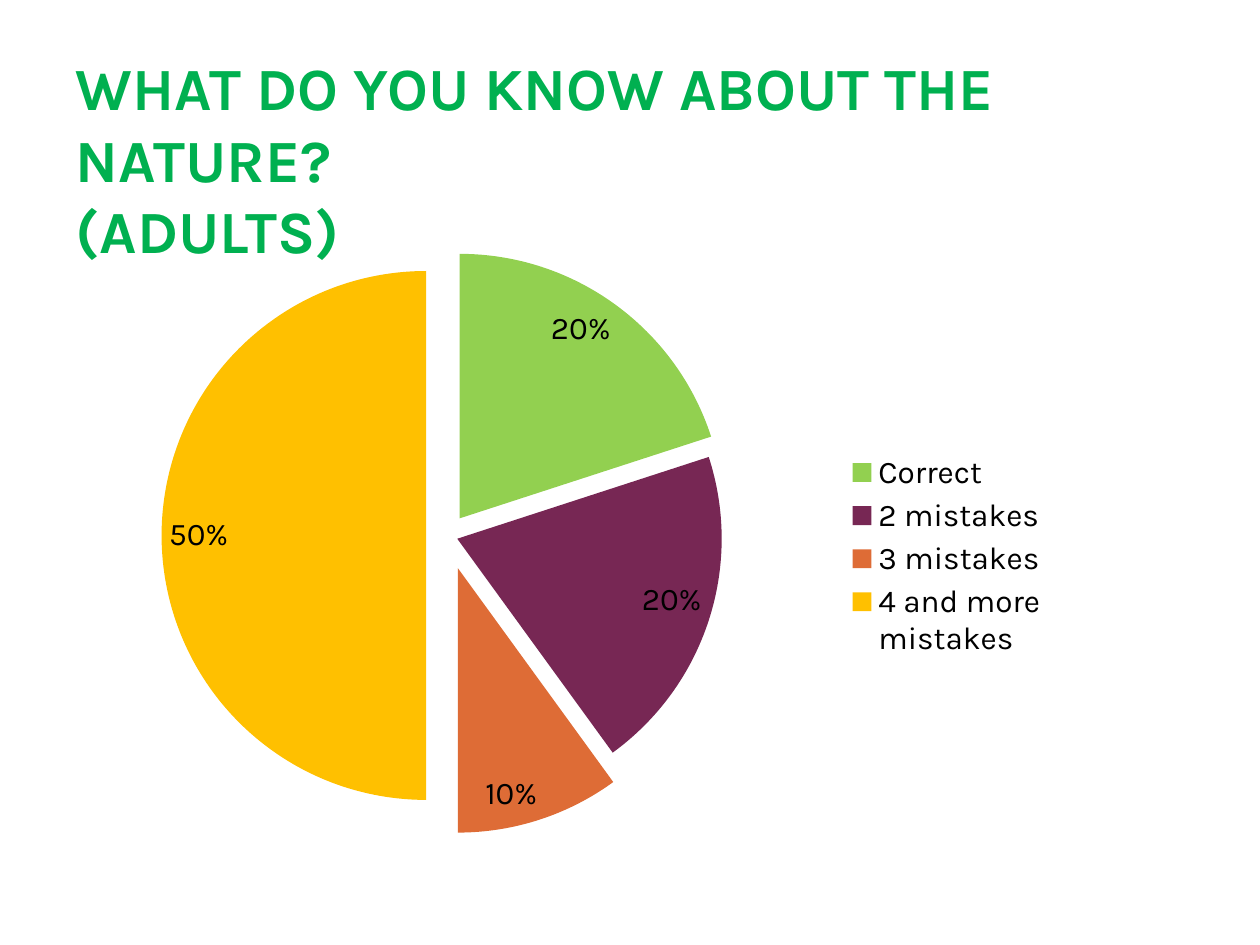
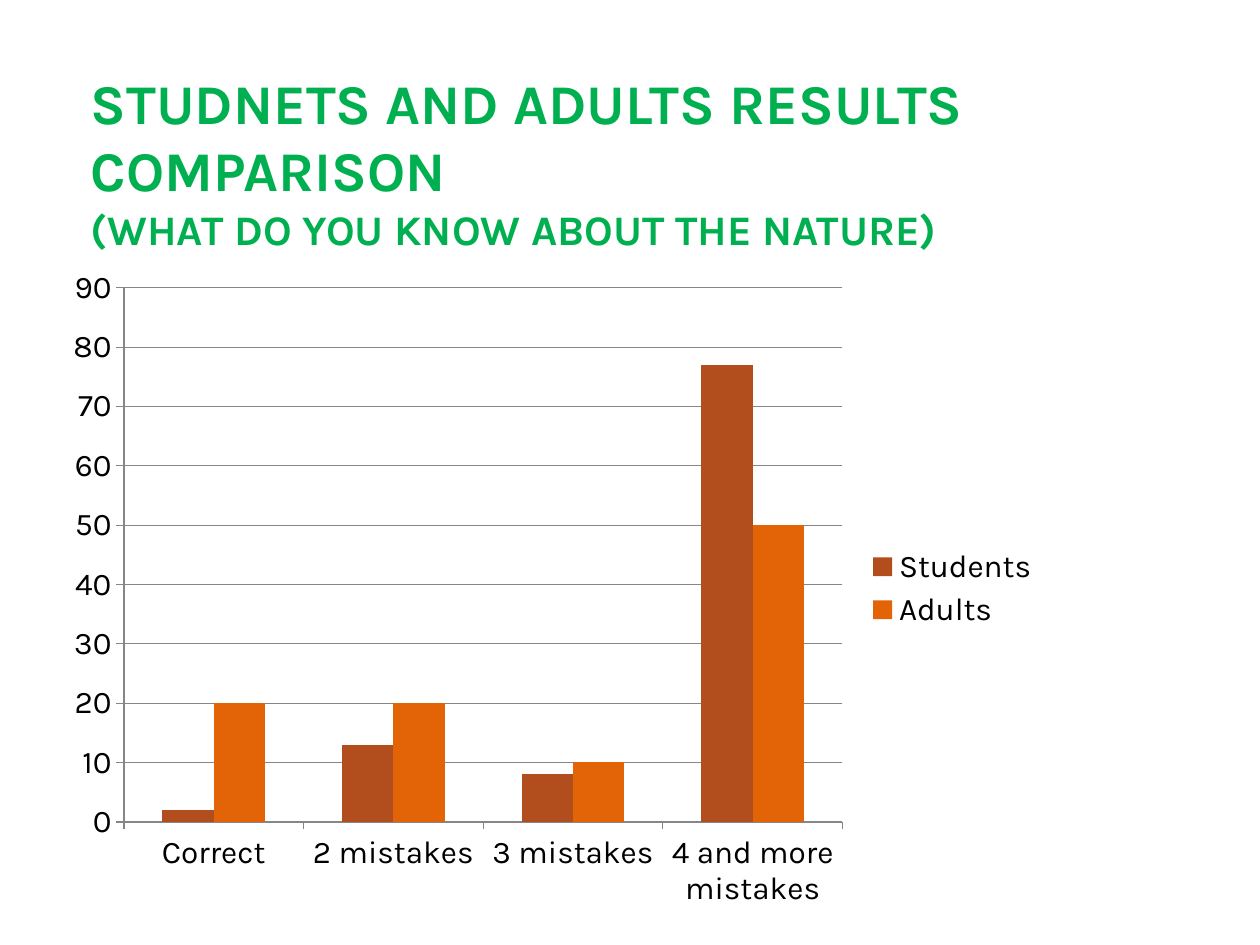
from dataclasses import dataclass

from lxml import etree
from pptx import Presentation
from pptx.chart.chart import Chart
from pptx.chart.data import CategoryChartData
from pptx.dml.color import RGBColor
from pptx.enum.chart import XL_CHART_TYPE, XL_LABEL_POSITION, XL_LEGEND_POSITION, XL_TICK_MARK
from pptx.enum.text import MSO_ANCHOR, MSO_AUTO_SIZE, PP_ALIGN
from pptx.oxml.ns import qn
from pptx.slide import Slide
from pptx.util import Cm, Pt

PIE = XL_CHART_TYPE.PIE
COLUMNS = XL_CHART_TYPE.COLUMN_CLUSTERED
INSIDE_END = XL_LABEL_POSITION.INSIDE_END
LEGEND_RIGHT = XL_LEGEND_POSITION.RIGHT
TICK_OUTSIDE = XL_TICK_MARK.OUTSIDE
BOTTOM = MSO_ANCHOR.BOTTOM
NO_AUTOFIT = MSO_AUTO_SIZE.NONE
LEFT = PP_ALIGN.LEFT

FONT = "Karla"
GREEN = "00B050"
BLACK = "000000"
GREY = "868686"
TITLE_ONLY_LAYOUT = 5
CONTENT_WIDTH = 20.12
TITLE_HEIGHT = 3.18
CHART_HEIGHT = 13.46

CATEGORIES = ["Correct", "2 mistakes", "3 mistakes", "4 and more mistakes"]
STUDENTS = [2, 13, 8, 77]
ADULTS = [20, 20, 10, 50]


@dataclass(frozen=True)
class Title:
    lines: list[str]
    sizes: list[float]
    left: float
    top: float


@dataclass(frozen=True)
class PlotArea:
    """Inner plot area as fractions of the chart frame."""
    x: float
    y: float
    w: float
    h: float


@dataclass(frozen=True)
class ChartFrame:
    left: float
    top: float
    plot: PlotArea


@dataclass(frozen=True)
class Slice:
    color: str
    explosion: int


@dataclass(frozen=True)
class Group:
    name: str
    values: list[int]
    color: str


ADULT_SLICES = [Slice("92D050", 8), Slice("772754", 4), Slice("DE6C36", 13), Slice("FFC000", 8)]
GROUPS = [Group("Students", STUDENTS, "B24D1D"), Group("Adults", ADULTS, "E36406")]


def rgb(color: str) -> RGBColor:
    return RGBColor.from_string(color)


def add_titled_slide(presentation, title: Title) -> Slide:
    slide = presentation.slides.add_slide(presentation.slide_layouts[TITLE_ONLY_LAYOUT])
    shape = slide.shapes.title
    shape.left, shape.top = Cm(title.left), Cm(title.top)
    shape.width, shape.height = Cm(CONTENT_WIDTH), Cm(TITLE_HEIGHT)
    frame = shape.text_frame
    frame.text = "\v".join(title.lines)
    frame.word_wrap = True
    frame.auto_size = NO_AUTOFIT
    frame.vertical_anchor = BOTTOM
    frame.margin_left = frame.margin_right = Cm(0.13)
    frame.margin_top = frame.margin_bottom = 0
    paragraph = frame.paragraphs[0]
    paragraph.alignment = LEFT
    for run, size in zip(paragraph.runs, title.sizes):
        run.font.name = FONT
        run.font.size = Pt(size)
        run.font.bold = True
        run.font.color.rgb = rgb(GREEN)
    for line_break in paragraph._p.findall(qn("a:br")):
        etree.SubElement(line_break, qn("a:rPr"), sz=str(round(title.sizes[0] * 100)))
    return slide


def set_plot_area(chart: Chart, plot: PlotArea) -> None:
    plot_area = chart._chartSpace.chart.plotArea
    for old_layout in plot_area.findall(qn("c:layout")):
        plot_area.remove(old_layout)
    layout = etree.Element(qn("c:layout"))
    manual = etree.SubElement(layout, qn("c:manualLayout"))
    settings = {"layoutTarget": "inner", "xMode": "edge", "yMode": "edge",
                "x": plot.x, "y": plot.y, "w": plot.w, "h": plot.h}
    for name, value in settings.items():
        etree.SubElement(manual, qn(f"c:{name}"), val=str(value))
    plot_area.insert(0, layout)


def add_chart(slide: Slide, kind, frame: ChartFrame, values_by_name: dict[str, list[int]]) -> Chart:
    data = CategoryChartData()
    data.categories = CATEGORIES
    for name, values in values_by_name.items():
        data.add_series(name, values)
    chart = slide.shapes.add_chart(kind, Cm(frame.left), Cm(frame.top),
                                   Cm(CONTENT_WIDTH), Cm(CHART_HEIGHT), data).chart
    chart.has_title = False
    chart.font.name = FONT
    chart.font.size = Pt(18)
    chart.font.color.rgb = rgb(BLACK)
    chart.has_legend = True
    chart.legend.position = LEGEND_RIGHT
    chart.legend.include_in_layout = False
    set_plot_area(chart, frame.plot)
    return chart


def add_adults_pie(slide: Slide, frame: ChartFrame) -> None:
    chart = add_chart(slide, PIE, frame, {"Series 1": ADULTS})
    plot = chart.plots[0]
    plot.vary_by_categories = True
    series = plot.series[0]
    for index, pie_slice in enumerate(ADULT_SLICES):
        fill = series.points[index].format.fill
        fill.solid()
        fill.fore_color.rgb = rgb(pie_slice.color)
    for point, pie_slice in zip(series._element.findall(qn("c:dPt")), ADULT_SLICES):
        explosion = etree.Element(qn("c:explosion"), val=str(pie_slice.explosion))
        point.find(qn("c:spPr")).addprevious(explosion)
    plot.has_data_labels = True
    labels = plot.data_labels
    labels.show_percentage = True
    labels.show_value = False
    labels.number_format = "0%"
    labels.number_format_is_linked = False
    labels.position = INSIDE_END


def add_comparison_columns(slide: Slide, frame: ChartFrame) -> None:
    chart = add_chart(slide, COLUMNS, frame, {group.name: group.values for group in GROUPS})
    plot = chart.plots[0]
    plot.vary_by_categories = False
    plot.gap_width = 150
    plot.overlap = 0
    for series, group in zip(plot.series, GROUPS):
        series.format.fill.solid()
        series.format.fill.fore_color.rgb = rgb(group.color)
    value_axis = chart.value_axis
    value_axis.minimum_scale, value_axis.maximum_scale = 0, 90
    value_axis.major_unit = 10
    value_axis.has_major_gridlines = True
    for axis in (chart.category_axis, value_axis):
        axis.major_tick_mark = TICK_OUTSIDE
    for part in (chart.category_axis, value_axis, value_axis.major_gridlines):
        part.format.line.color.rgb = rgb(GREY)
        part.format.line.width = Pt(0.75)


def main() -> None:
    presentation = Presentation()
    presentation.slide_width, presentation.slide_height = Cm(25.4), Cm(19.05)

    adults_title = Title(["WHAT DO YOU KNOW ABOUT THE NATURE?", "(ADULTS)"], [34.2, 34.2], 1.4, 2.18)
    adults_slide = add_titled_slide(presentation, adults_title)
    add_adults_pie(adults_slide, ChartFrame(1.27, 4.47, PlotArea(0.12, 0.07, 0.53, 0.8)))

    comparison_title = Title(
        ["STUDNETS AND ADULTS RESULTS COMPARISON", "(WHAT DO YOU KNOW ABOUT THE NATURE)"],
        [32, 24], 1.7, 1.93)
    comparison_slide = add_titled_slide(presentation, comparison_title)
    add_comparison_columns(comparison_slide, ChartFrame(1.09, 5.13, PlotArea(0.07, 0.05, 0.72, 0.8)))

    presentation.save("out.pptx")


if __name__ == "__main__":
    main()
